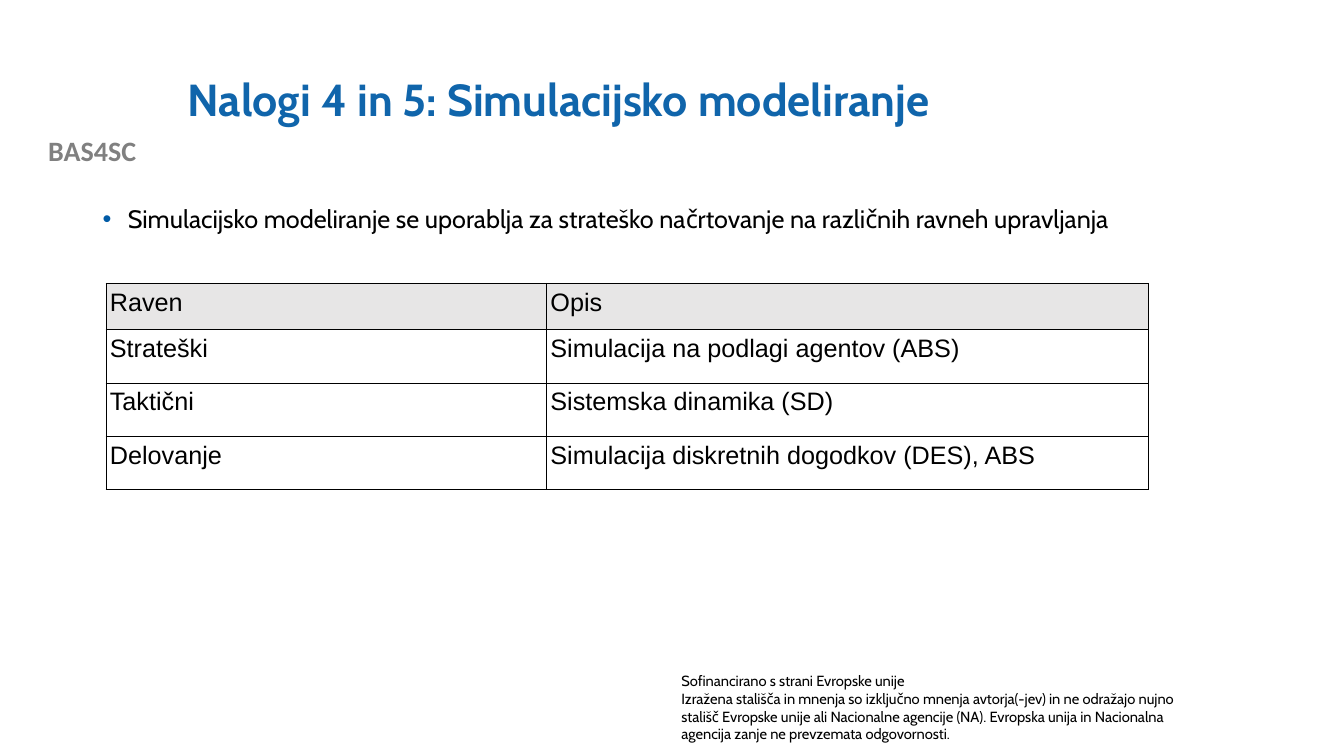
from pptx import Presentation
from pptx.dml.color import RGBColor
from pptx.enum.shapes import MSO_SHAPE
from pptx.enum.text import MSO_ANCHOR, PP_ALIGN
from pptx.oxml.ns import qn
from pptx.util import Inches, Pt
from lxml import etree

RECT = MSO_SHAPE.RECTANGLE
TOP, MIDDLE = MSO_ANCHOR.TOP, MSO_ANCHOR.MIDDLE
LEFT, CENTER = PP_ALIGN.LEFT, PP_ALIGN.CENTER

BLACK = RGBColor(0x00, 0x00, 0x00)
WHITE = RGBColor(0xFF, 0xFF, 0xFF)
GRAY = RGBColor(0x80, 0x80, 0x80)
PALE = RGBColor(0xE7, 0xE6, 0xE6)
BLUE = RGBColor(0x10, 0x65, 0xAB)
DOT = RGBColor(0x01, 0x5B, 0xA6)

WIDE, HIGH = 13.33, 7.5
COLS = (4.37, 5.97)
ROWS = (0.46, 0.53, 0.53, 0.53)
LEVELS = (
    ("Raven", "Opis"),
    ("Strateški", "Simulacija na podlagi agentov (ABS)"),
    ("Taktični", "Sistemska dinamika (SD)"),
    ("Delovanje", "Simulacija diskretnih dogodkov (DES), ABS"),
)
CREDIT = (
    "Sofinancirano s strani Evropske unije",
    "Izražena stališča in mnenja so izključno mnenja avtorja(-jev) in ne "
    "odražajo nujno stališč Evropske unije ali Nacionalne agencije (NA). "
    "Evropska unija in Nacionalna agencija zanje ne prevzemata odgovornosti.",
)


def inches(box):
    return [Inches(n) for n in box]


def write(para, text, size, font="Cabin", color=BLACK, bold=False, align=LEFT):
    para.alignment = align
    run = para.add_run()
    run.text = text
    run.font.size = Pt(size)
    run.font.name = font
    run.font.bold = bold
    run.font.color.rgb = color


def text_box(slide, box):
    frame = slide.shapes.add_textbox(*inches(box)).text_frame
    frame.word_wrap = True
    return frame.paragraphs[0]


def add_mark(slide, box):
    write(text_box(slide, box), "BAS4SC", 20, "Calibri", GRAY, True, CENTER)


def add_credit(slide, box):
    panel = slide.shapes.add_shape(RECT, *inches(box))
    panel.shadow.inherit = False
    panel.fill.solid()
    panel.fill.fore_color.rgb = WHITE
    panel.line.color.rgb = WHITE
    panel.line.width = Pt(0.75)
    frame = panel.text_frame
    frame.word_wrap = True
    frame.vertical_anchor = TOP
    for i, text in enumerate(CREDIT):
        para = frame.add_paragraph() if i else frame.paragraphs[0]
        write(para, text, 10.5)


def add_title(slide, box):
    title = slide.shapes.title
    title.left, title.top, title.width, title.height = inches(box)
    frame = title.text_frame
    frame.vertical_anchor = MIDDLE
    para = frame.paragraphs[0]
    para.line_spacing = 0.9
    write(para, "Nalogi 4 in 5: Simulacijsko modeliranje", 32, color=BLUE, bold=True)


def add_point(slide, box):
    para = text_box(slide, box)
    para.line_spacing = 0.9
    # Bullet with a hanging indent
    props = para._p.get_or_add_pPr()
    props.set("marL", str(Inches(0.25)))
    props.set("indent", str(-Inches(0.25)))
    tint = etree.SubElement(props, qn("a:buClr"))
    etree.SubElement(tint, qn("a:srgbClr"), val=str(DOT))
    etree.SubElement(props, qn("a:buFont"), typeface="Arial")
    etree.SubElement(props, qn("a:buChar"), char="•")
    write(para, "Simulacijsko modeliranje se uporablja za strateško "
                "načrtovanje na različnih ravneh upravljanja", 18)


def rule_cell(cell):
    props = cell._tc.get_or_add_tcPr()
    for i, side in enumerate(("lnL", "lnR", "lnT", "lnB")):
        line = etree.Element(qn("a:" + side), w=str(Pt(0.57)))
        fill = etree.SubElement(line, qn("a:solidFill"))
        etree.SubElement(fill, qn("a:srgbClr"), val=str(BLACK))
        props.insert(i, line)


def add_levels(slide, left, top):
    box = inches((left, top, sum(COLS), sum(ROWS)))
    table = slide.shapes.add_table(len(ROWS), len(COLS), *box).table
    for col, width in zip(table.columns, COLS):
        col.width = Inches(width)
    for r, (row, height) in enumerate(zip(table.rows, ROWS)):
        row.height = Inches(height)
        for cell, text in zip(row.cells, LEVELS[r]):
            cell.margin_left = cell.margin_right = Inches(0.04)
            cell.margin_top = cell.margin_bottom = Inches(0.05)
            if r:
                cell.fill.background()
            else:
                cell.fill.solid()
                cell.fill.fore_color.rgb = PALE
            rule_cell(cell)
            write(cell.text_frame.paragraphs[0], text, 18, "Arial")


def main():
    deck = Presentation()
    deck.slide_width, deck.slide_height = Inches(WIDE), Inches(HIGH)
    slide = deck.slides.add_slide(deck.slide_layouts[5])
    add_mark(slide, (0, 1.28, 1.83, 0.43))
    add_credit(slide, (6.66, 6.62, 5.43, 0.81))
    add_title(slide, (1.76, 0.4, 10.66, 1.22))
    add_point(slide, (0.92, 2, 11.5, 4.76))
    add_levels(slide, 1.05, 2.81)
    deck.save("out.pptx")


if __name__ == "__main__":
    main()
